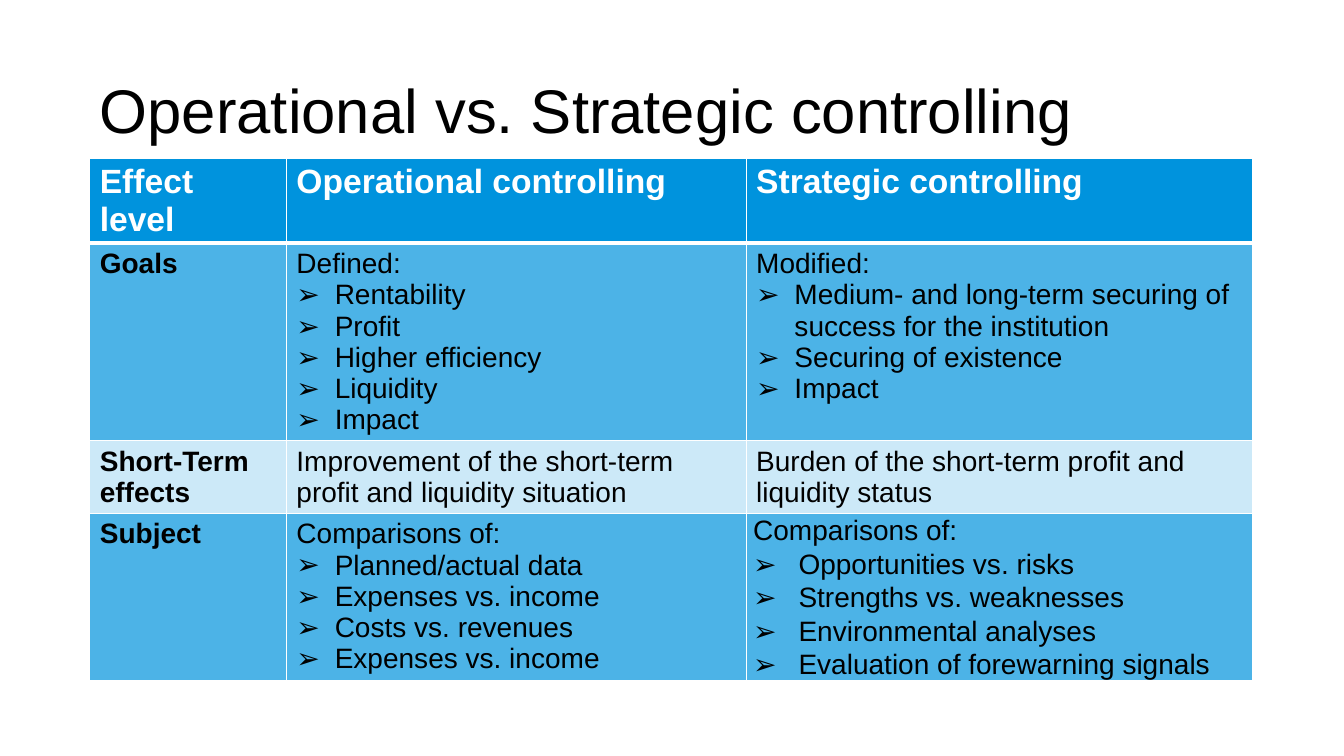
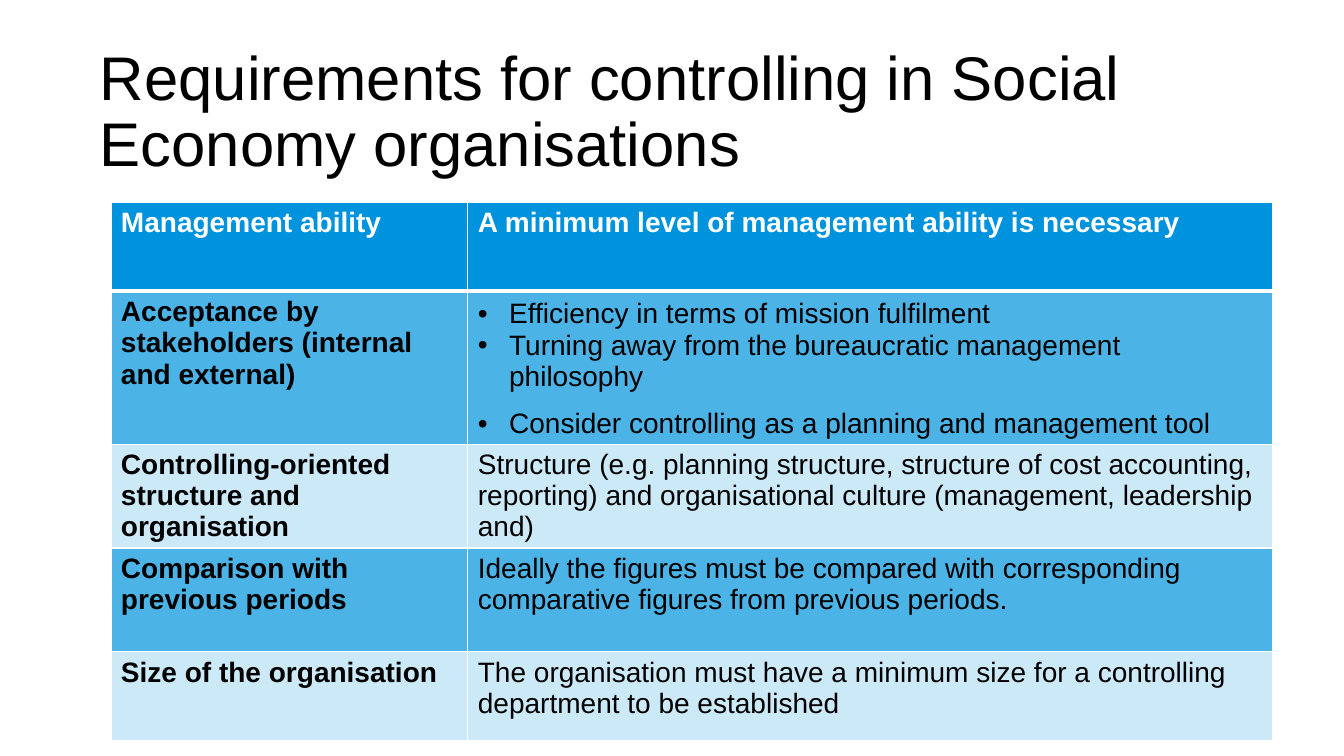
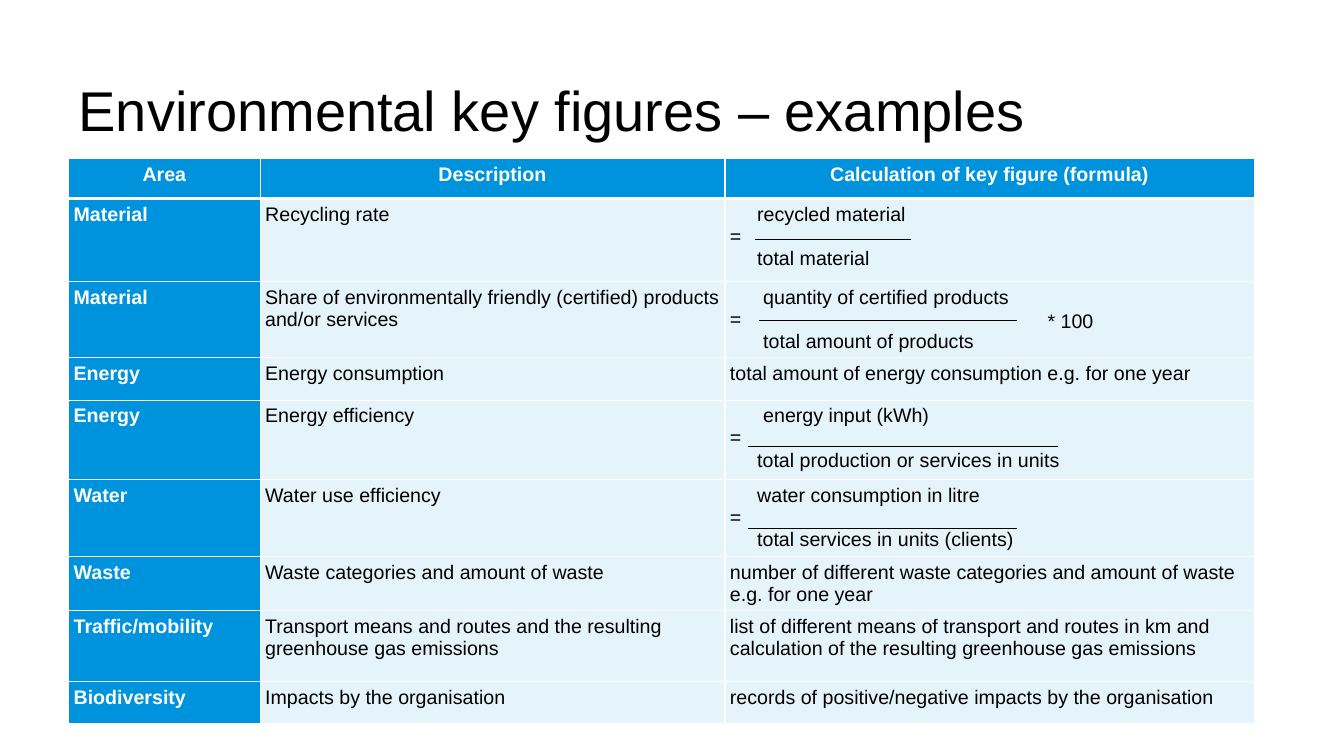
from lxml import etree
from pptx import Presentation
from pptx import util as u
from pptx.dml.color import RGBColor
from pptx.enum import shapes, text
from pptx.oxml import ns

BLUE, WHITE, BLACK = "0093DD", "FFFFFF", "000000"
FONT = "Arial"
NORMAL_INSETS = (0.1, 0.05, 0.1, 0.05)
NARROW_INSETS = (0.05, 0.05, 0.05, 0.05)


def rgb(value):
    return RGBColor.from_string(value)


def add_xml(parent, tag, **attributes):
    return etree.SubElement(parent, ns.qn(tag), attributes)


# Text
def write(paragraph, content, size=20, color=BLACK, bold=False, align=text.PP_ALIGN.LEFT,
          spacing=None, after=None, bullet=None, indent=0):
    paragraph.alignment = align
    if spacing:
        paragraph.line_spacing = spacing
    if after:
        paragraph.space_after = u.Pt(after)
    properties = paragraph._p.get_or_add_pPr()
    properties.set("marL", str(u.Inches(indent)))
    properties.set("indent", str(u.Inches(-indent if bullet else 0)))
    if bullet:
        add_xml(properties, "a:buFont", typeface=FONT)
        add_xml(properties, "a:buChar", char=bullet)
    run = paragraph.add_run()
    run.text = content
    run.font.name, run.font.size, run.font.bold = FONT, u.Pt(size), bold
    run.font.color.rgb = rgb(color)


def add_titled_slide(deck, title, left=0.89, size=44):
    slide = deck.slides.add_slide(deck.slide_layouts[5])
    heading = slide.shapes.title
    heading.left, heading.top = u.Inches(left), u.Inches(0.4)
    heading.width, heading.height = u.Inches(10.7), u.Inches(1.45)
    frame = heading.text_frame
    frame.auto_size = text.MSO_AUTO_SIZE.NONE
    frame.vertical_anchor = text.MSO_ANCHOR.MIDDLE
    write(frame.paragraphs[0], title, size=size, spacing=0.9)
    return slide


# Table cells
def style_cell(cell, opacity, row, insets):
    cell.margin_left, cell.margin_top, cell.margin_right, cell.margin_bottom = map(u.Inches, insets)
    properties = cell._tc.get_or_add_tcPr()
    for side in "LRTB":
        heavy = (row, side) in ((0, "B"), (1, "T"))
        border = add_xml(properties, f"a:ln{side}", w=str(u.Pt(3 if heavy else 1)))
        add_xml(add_xml(border, "a:solidFill"), "a:srgbClr", val=WHITE)
    cell.fill.solid()
    cell.fill.fore_color.rgb = rgb(BLUE)
    if opacity < 100:
        color = properties.find(ns.qn("a:solidFill")).find(ns.qn("a:srgbClr"))
        add_xml(color, "a:alpha", val=str(opacity * 1000))


def fill_cell(cell, content, **formats):
    """Content is a string, or a list of strings and (string, own formats) pairs."""
    frame = cell.text_frame
    for index, item in enumerate(content if isinstance(content, list) else [content]):
        words, own = item if isinstance(item, tuple) else (item, {})
        paragraph = frame.add_paragraph() if index else frame.paragraphs[0]
        write(paragraph, words, **{**formats, **own})


def add_grid(slide, left, top, columns, heights, rows, look, insets=NORMAL_INSETS, special=None):
    """look(row, column) gives the opacity of a cell and its text formats."""
    grid = slide.shapes.add_table(len(rows), len(columns), u.Inches(left), u.Inches(top),
                                  u.Inches(sum(columns)), u.Inches(sum(heights))).table
    for column, width in zip(grid.columns, columns):
        column.width = u.Inches(width)
    for r, (height, contents) in enumerate(zip(heights, rows)):
        grid.rows[r].height = u.Inches(height)
        for c, content in enumerate(contents):
            opacity, formats = look(r, c)
            cell = grid.cell(r, c)
            style_cell(cell, opacity, r, (special or {}).get((r, c), insets))
            fill_cell(cell, content, **formats)


def banded_look(header_size):
    def look(row, column):
        if row == 0:
            return 100, dict(size=header_size, color=WHITE, bold=True)
        return (70 if row % 2 else 20), dict(bold=column == 0)
    return look


def key_figure_look(row, column):
    if row == 0:
        return 100, dict(size=14, color=WHITE, bold=True, align=text.PP_ALIGN.CENTER)
    if column == 0:
        return 100, dict(size=14, color=WHITE, bold=True)
    return 10, dict(size=14)


def bullets(items, char="➢", indent=0.38, **formats):
    return [(item, dict(bullet=char, indent=indent, **formats)) for item in items]


def fraction(upper, lower, upper_indent=0.27, lower_indent=0.27):
    return [(upper, dict(indent=upper_indent)), "=", (lower, dict(indent=lower_indent))]


# Slides
def add_comparison(deck):
    slide = add_titled_slide(deck, "Operational vs. Strategic controlling")
    rows = [
        ["Effect level", "Operational controlling", "Strategic controlling"],
        ["Goals",
         ["Defined:"] + bullets(["Rentability", "Profit", "Higher efficiency", "Liquidity", "Impact"]),
         ["Modified:"] + bullets(["Medium- and long-term securing of success for the institution",
                                  "Securing of existence", "Impact"])],
        ["Short-Term effects",
         "Improvement of the short-term profit and liquidity situation",
         "Burden of the short-term profit and liquidity status"],
        ["Subject",
         ["Comparisons of:"] + bullets(["Planned/actual data", "Expenses vs. income",
                                        "Costs vs. revenues", "Expenses vs. income"]),
         [("Comparisons of:", dict(spacing=1.07))]
         + bullets(["Opportunities vs. risks", "Strengths vs. weaknesses", "Environmental analyses",
                    "Evaluation of forewarning signals"], indent=0.45, spacing=1.07)],
    ]
    add_grid(slide, 0.89, 1.57, [1.95, 4.56, 5.02], [0.84, 1.96, 0.72, 1.65], rows,
             banded_look(24), special={(3, 2): (0.07, 0, 0.07, 0)})


def add_requirements(deck):
    slide = add_titled_slide(deck, "Requirements for controlling in Social Economy organisations")
    dot = dict(char="•", indent=0.31)
    acceptance = (bullets(["Efficiency in terms of mission fulfilment"], spacing=1.07, **dot)
                  + bullets(["Turning away from the bureaucratic management philosophy"], **dot)
                  + bullets(["Consider controlling as a planning and management tool"],
                            spacing=1.5, after=8, **dot))
    rows = [
        ["Management ability", "A minimum level of management ability is necessary"],
        ["Acceptance by stakeholders (internal and external)", acceptance],
        ["Controlling-oriented structure and organisation",
         "Structure (e.g. planning structure, structure of cost accounting, reporting) and "
         "organisational culture (management, leadership and)"],
        ["Comparison with previous periods",
         "Ideally the figures must be compared with corresponding comparative figures from "
         "previous periods."],
        ["Size of the organisation",
         "The organisation must have a minimum size for a controlling department to be established"],
    ]
    add_grid(slide, 1.1, 2.01, [3.54, 7.98], [0.88, 1.51, 1.03, 1.03, 0.88], rows, banded_look(20))


def add_fraction_bar(slide, left, right, y):
    bar = slide.shapes.add_connector(shapes.MSO_CONNECTOR.STRAIGHT, u.Inches(left), u.Inches(y),
                                     u.Inches(right), u.Inches(y))
    bar.line.color.rgb = rgb(BLACK)
    bar.line.width = u.Pt(0.5)
    add_xml(bar._element.spPr, "a:effectLst")


def add_factor(slide, content, left, top):
    frame = slide.shapes.add_textbox(u.Inches(left), u.Inches(top),
                                     u.Inches(0.8), u.Inches(0.22)).text_frame
    frame.word_wrap = True
    frame.margin_left = frame.margin_top = frame.margin_right = frame.margin_bottom = 0
    write(frame.paragraphs[0], content, size=14)


def add_key_figures(deck):
    left, top = 0.68, 1.57
    slide = add_titled_slide(deck, "Environmental key figures – examples", left=left, size=40)
    rows = [
        ["Area", "Description", "Calculation of key figure (formula)"],
        ["Material", "Recycling rate", fraction("recycled material", "total material")],
        ["Material", "Share of environmentally friendly (certified) products and/or services",
         fraction("quantity of certified products", "total amount of products", 0.33, 0.33)],
        ["Energy", "Energy consumption", "total amount of energy consumption e.g. for one year"],
        ["Energy", "Energy efficiency",
         fraction("energy input (kWh)", "total production or services in units", 0.33)],
        ["Water", "Water use efficiency",
         fraction("water consumption in litre", "total services in units (clients)")],
        ["Waste", "Waste categories and amount of waste",
         "number of different waste categories and amount of waste e.g. for one year"],
        ["Traffic/mobility", "Transport means and routes and the resulting greenhouse gas emissions",
         "list of different means of transport and routes in km and calculation of the resulting "
         "greenhouse gas emissions"],
        ["Biodiversity", "Impacts by the organisation",
         "records of positive/negative impacts by the organisation"],
    ]
    columns = [1.9, 4.61, 5.25]
    add_grid(slide, left, top, columns, [0.4, 0.82, 0.76, 0.42, 0.79, 0.76, 0.54, 0.7, 0.42],
             rows, key_figure_look, NARROW_INSETS)
    # Fraction bars and factor, measured from the corner of the formula column
    formula_left = left + columns[0] + columns[1]
    for start, end, drop in [(0.3, 1.85, 0.8), (0.34, 2.9, 1.61), (0.23, 3.3, 2.86), (0.23, 2.9, 3.67)]:
        add_fraction_bar(slide, formula_left + start, formula_left + end, top + drop)
    add_factor(slide, "* 100", formula_left + 3.2, top + 1.49)


def main():
    deck = Presentation()
    deck.slide_width, deck.slide_height = u.Inches(13.33), u.Inches(7.5)
    add_comparison(deck)
    add_requirements(deck)
    add_key_figures(deck)
    deck.save("out.pptx")


if __name__ == "__main__":
    main()
